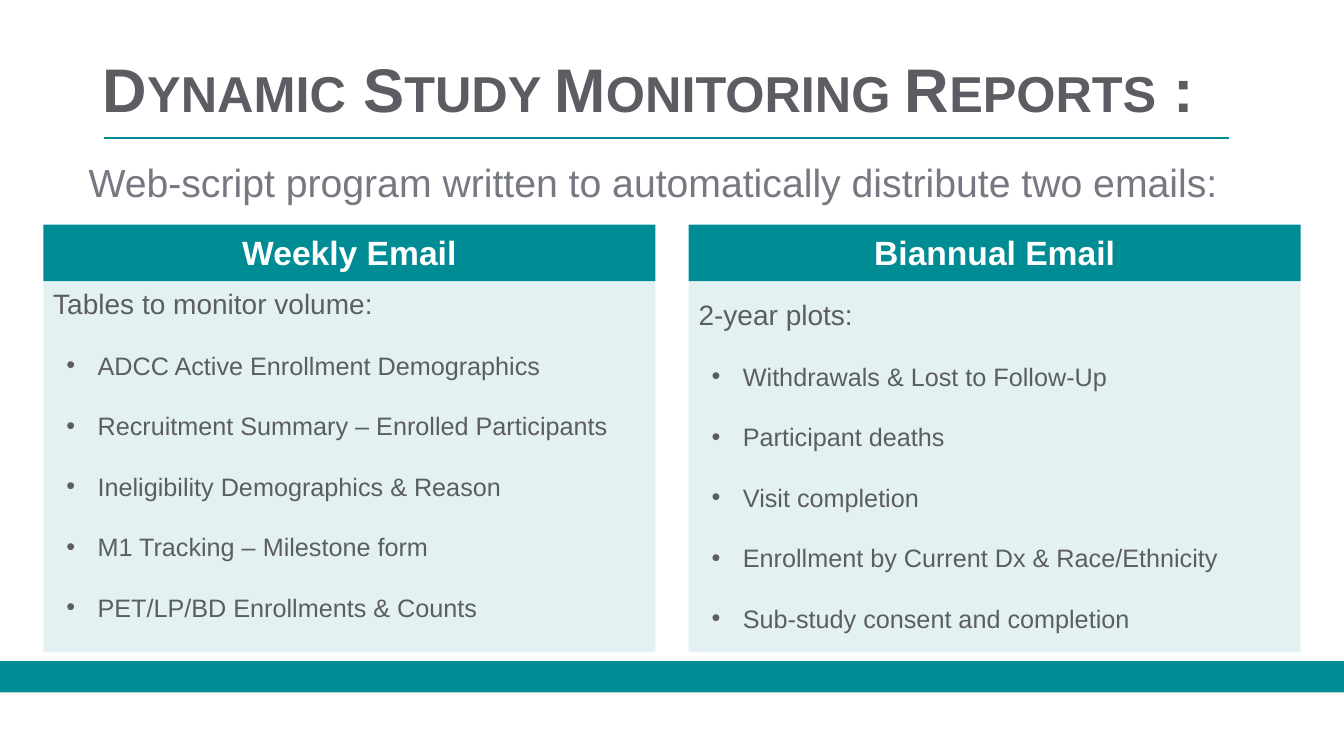
from dataclasses import dataclass

from lxml import etree
from pptx import Presentation
from pptx.dml.color import RGBColor
from pptx.enum.shapes import MSO_CONNECTOR, MSO_SHAPE
from pptx.enum.text import MSO_ANCHOR, PP_ALIGN
from pptx.oxml.ns import qn
from pptx.util import Emu, Pt

RECTANGLE = MSO_SHAPE.RECTANGLE
STRAIGHT = MSO_CONNECTOR.STRAIGHT
CENTER = PP_ALIGN.CENTER
TOP, MIDDLE = MSO_ANCHOR.TOP, MSO_ANCHOR.MIDDLE

EMU_PER_PX = 9144  # 100 px to the inch
TEAL, PALE_TEAL = "008C95", "B2D9DC"
DARK_GREY, MID_GREY, WHITE = "5C5D62", "767882", "FFFFFF"

SLIDE_WIDTH, SLIDE_HEIGHT = 1333, 750
COLUMN_WIDTH = 607
HEADER_TOP, HEADER_HEIGHT = 223, 56
PANEL_TOP, PANEL_HEIGHT = 279, 368
LIST_HEIGHT = 337
BULLET_INDENT, BULLET_HANG = 44, 31

# Large and small capitals alternate, starting with large.
TITLE_PARTS = ("D", "YNAMIC", " S", "TUDY ", "M", "ONITORING ", "R", "EPORTS", " :")
TITLE_SIZES = (44, 36)


@dataclass(frozen=True)
class EmailColumn:
    left: int
    list_top: int
    heading: str
    intro: str
    bullets: tuple[str, ...]


EMAIL_COLUMNS = (
    EmailColumn(43, 279, "Weekly Email", "Tables to monitor volume:", (
        "ADCC Active Enrollment Demographics",
        "Recruitment Summary – Enrolled Participants",
        "Ineligibility Demographics & Reason",
        "M1 Tracking – Milestone form",
        "PET/LP/BD Enrollments & Counts",
    )),
    EmailColumn(683, 290, "Biannual Email", "2-year plots:", (
        "Withdrawals & Lost to Follow-Up",
        "Participant deaths",
        "Visit completion",
        "Enrollment by Current Dx & Race/Ethnicity",
        "Sub-study consent and completion",
    )),
)


def px(length: int) -> Emu:
    return Emu(length * EMU_PER_PX)


def rgb(color: str) -> RGBColor:
    return RGBColor.from_string(color)


def add_run(paragraph, text: str, size: int, color: str, bold: bool = False) -> None:
    run = paragraph.add_run()
    run.text = text
    font_format = {"name": "Arial", "size": Pt(size), "bold": bold}
    for attribute, value in font_format.items():
        setattr(run.font, attribute, value)
    run.font.color.rgb = rgb(color)


def add_text_frame(slide, left: int, top: int, width: int, height: int, anchor=TOP):
    frame = slide.shapes.add_textbox(px(left), px(top), px(width), px(height)).text_frame
    frame.word_wrap = True
    frame.vertical_anchor = anchor
    return frame


def add_block(slide, left: int, top: int, width: int, height: int,
              color: str, opacity: int = 100) -> None:
    """Add a borderless rectangle; opacity is a percentage."""
    block = slide.shapes.add_shape(RECTANGLE, px(left), px(top), px(width), px(height))
    block.shadow.inherit = False
    block.fill.solid()
    block.fill.fore_color.rgb = rgb(color)
    block.line.fill.background()
    if opacity < 100:
        fill_color = block.fill._xPr.find(f"{qn('a:solidFill')}/{qn('a:srgbClr')}")
        etree.SubElement(fill_color, qn("a:alpha"), val=str(opacity * 1000))


def add_bullet(frame, text: str) -> None:
    paragraph = frame.add_paragraph()
    properties = paragraph._p.get_or_add_pPr()
    properties.set("marL", str(px(BULLET_INDENT)))
    properties.set("indent", str(-px(BULLET_HANG)))
    etree.SubElement(properties, qn("a:buFont"), typeface="Arial")
    etree.SubElement(properties, qn("a:buChar"), char="•")
    paragraph.line_spacing = 2.0
    add_run(paragraph, text, 18, DARK_GREY)


def add_email_column(slide, column: EmailColumn) -> None:
    add_block(slide, column.left, HEADER_TOP, COLUMN_WIDTH, HEADER_HEIGHT, TEAL)
    heading = add_text_frame(slide, column.left, HEADER_TOP + 2,
                             COLUMN_WIDTH, HEADER_HEIGHT - 2).paragraphs[0]
    heading.alignment = CENTER
    add_run(heading, column.heading, 24, WHITE, bold=True)

    add_block(slide, column.left, PANEL_TOP, COLUMN_WIDTH, PANEL_HEIGHT, PALE_TEAL, opacity=36)
    report_list = add_text_frame(slide, column.left, column.list_top, COLUMN_WIDTH, LIST_HEIGHT)
    add_run(report_list.paragraphs[0], column.intro, 20, DARK_GREY)
    for bullet in column.bullets:
        add_bullet(report_list, bullet)


def add_title(slide) -> None:
    title = add_text_frame(slide, 92, 40, 1150, 104, MIDDLE).paragraphs[0]
    title.line_spacing = 0.9
    for index, part in enumerate(TITLE_PARTS):
        add_run(title, part, TITLE_SIZES[index % 2], DARK_GREY, bold=True)

    underline = slide.shapes.add_connector(STRAIGHT, px(103), px(137), px(1219), px(137))
    underline.line.color.rgb = rgb(TEAL)
    underline.line.width = Pt(1)
    etree.SubElement(underline._element.spPr, qn("a:effectLst"))


def main() -> None:
    presentation = Presentation()
    presentation.slide_width = px(SLIDE_WIDTH)
    presentation.slide_height = px(SLIDE_HEIGHT)
    slide = presentation.slides.add_slide(presentation.slide_layouts[6])

    add_block(slide, 0, 656, SLIDE_WIDTH, 31, TEAL)
    subtitle = add_text_frame(slide, 78, 147, 1177, 66, MIDDLE).paragraphs[0]
    add_run(subtitle, "Web-script program written to automatically distribute two emails:",
            28, MID_GREY)
    for column in EMAIL_COLUMNS:
        add_email_column(slide, column)
    add_title(slide)

    presentation.save("out.pptx")


if __name__ == "__main__":
    main()
